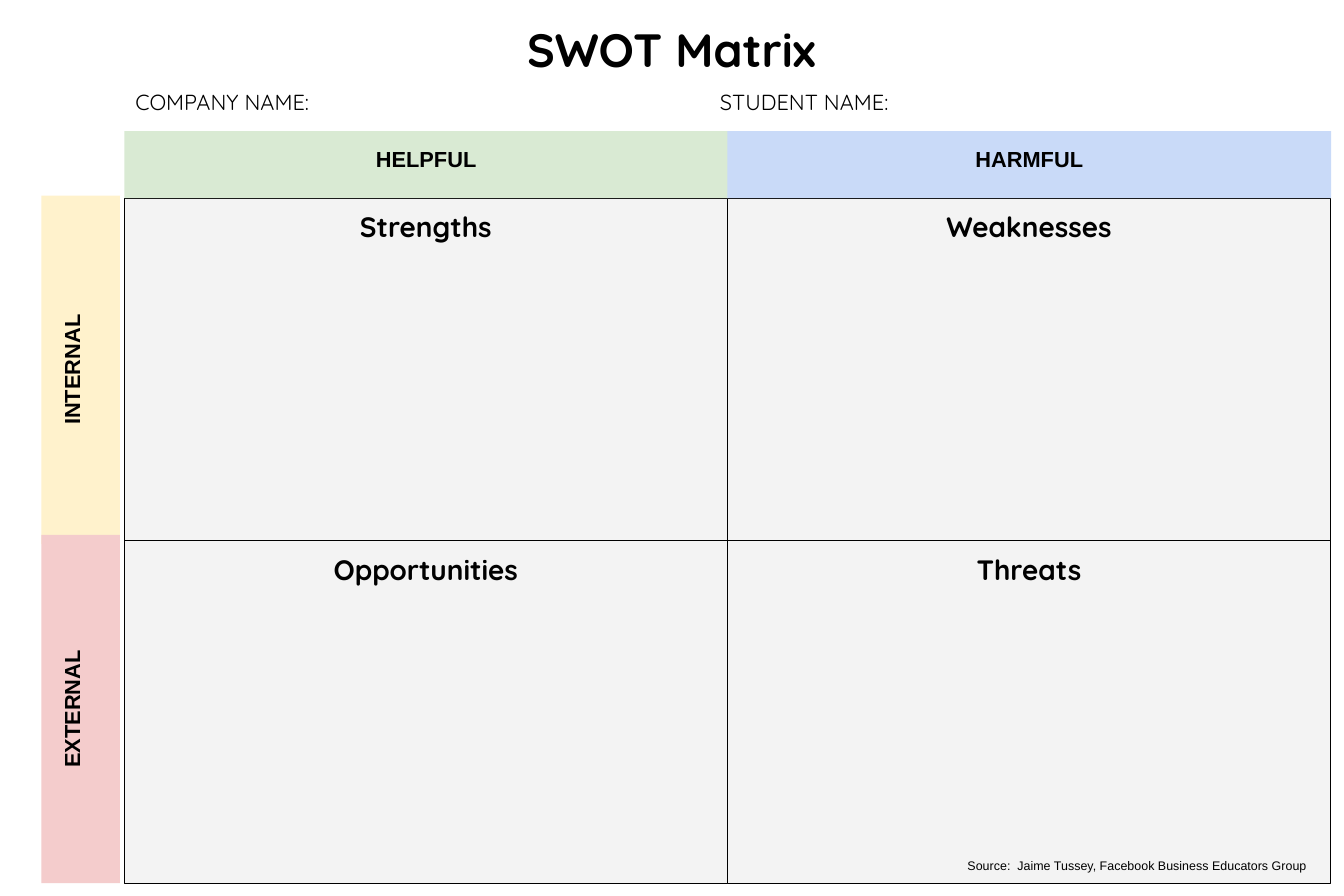
from lxml import etree
from pptx import Presentation
from pptx import util as u
from pptx.dml.color import RGBColor
from pptx.enum import shapes, text
from pptx.oxml import ns

HEX = {"ink": "000000", "cell": "F3F3F3", "green": "D9EAD3",
       "blue": "C9DAF8", "yellow": "FFF2CC", "red": "F4CCCC"}
LEFT, TOP, WIDE, HIGH = 1.11, 1.77, 5.385, 3.06  # grid of four cells

deck = Presentation()
deck.slide_width, deck.slide_height = u.Inches(12), u.Inches(8)
slide = deck.slides.add_slide(deck.slide_layouts[5])


def write(box, words, size, font="Quicksand", bold=True,
          align=text.PP_ALIGN.CENTER, top=0.1):
    frame = box.text_frame
    form = {"word_wrap": True, "auto_size": text.MSO_AUTO_SIZE.NONE,
            "vertical_anchor": text.MSO_ANCHOR.TOP,
            "margin_left": u.Inches(0.1), "margin_right": u.Inches(0.1),
            "margin_top": u.Inches(top), "margin_bottom": u.Inches(0.1)}
    for key, value in form.items():
        setattr(frame, key, value)
    para = frame.paragraphs[0]
    para.alignment = align
    run = para.add_run()
    run.text = words
    for key, value in {"name": font, "size": u.Pt(size), "bold": bold}.items():
        setattr(run.font, key, value)
    run.font.color.rgb = RGBColor.from_string(HEX["ink"])
    return para


def block(x, y, wide, high, fill, line=False):
    box = slide.shapes.add_shape(shapes.MSO_SHAPE.RECTANGLE, u.Inches(x),
                                 u.Inches(y), u.Inches(wide), u.Inches(high))
    box.shadow.inherit = False
    box.fill.solid()
    box.fill.fore_color.rgb = RGBColor.from_string(HEX[fill])
    if line:
        box.line.color.rgb = RGBColor.from_string(HEX["ink"])
        box.line.width = u.Pt(0.75)
    else:
        box.line.fill.background()
    return box


# Title
title = slide.shapes.title
place = {"left": 0.61, "top": 0.09, "width": 10.77, "height": 0.6}
for key, value in place.items():
    setattr(title, key, u.Inches(value))
write(title, "SWOT Matrix", 30)

# Four cells
cells = [["Strengths", "Weaknesses"], ["Opportunities", "Threats"]]
for row, names in enumerate(cells):
    for col, name in enumerate(names):
        cell = block(LEFT + col * WIDE, TOP + row * HIGH, WIDE, HIGH,
                     "cell", line=True)
        write(cell, name, 18)

# Name line, with a tab between the two labels
names = slide.shapes.add_textbox(u.Inches(LEFT), u.Inches(0.69),
                                 u.Inches(2 * WIDE), u.Inches(0.6))
para = write(names, "COMPANY NAME:\tSTUDENT NAME:", 14, bold=False,
             align=text.PP_ALIGN.LEFT)
tabs = etree.SubElement(para._p.get_or_add_pPr(), ns.qn("a:tabLst"))
etree.SubElement(tabs, ns.qn("a:tab"), pos=str(u.Inches(5.22)), algn="l")

# Row labels, turned to read upwards
long, thick = 3.11, 0.7
for name, fill, mid in [("INTERNAL", "yellow", 3.3), ("EXTERNAL", "red", 6.33)]:
    side = block(0.72 - long / 2, mid - thick / 2, long, thick, fill)
    side.rotation = 270
    write(side, name, 14, font="Arial", top=0.15)

# Column labels
for col, (name, fill) in enumerate([("HELPFUL", "green"), ("HARMFUL", "blue")]):
    head = block(LEFT + col * WIDE, 1.17, 5.39, 0.6, fill)
    write(head, name, 14, font="Arial", top=0.13)

# Source
source = slide.shapes.add_textbox(u.Inches(8.54), u.Inches(7.43),
                                  u.Inches(3.4), u.Inches(0.5))
write(source, "Source:  Jaime Tussey, Facebook Business Educators Group", 8,
      font="Arial", bold=False, align=text.PP_ALIGN.LEFT, top=0.23)

deck.save("out.pptx")
